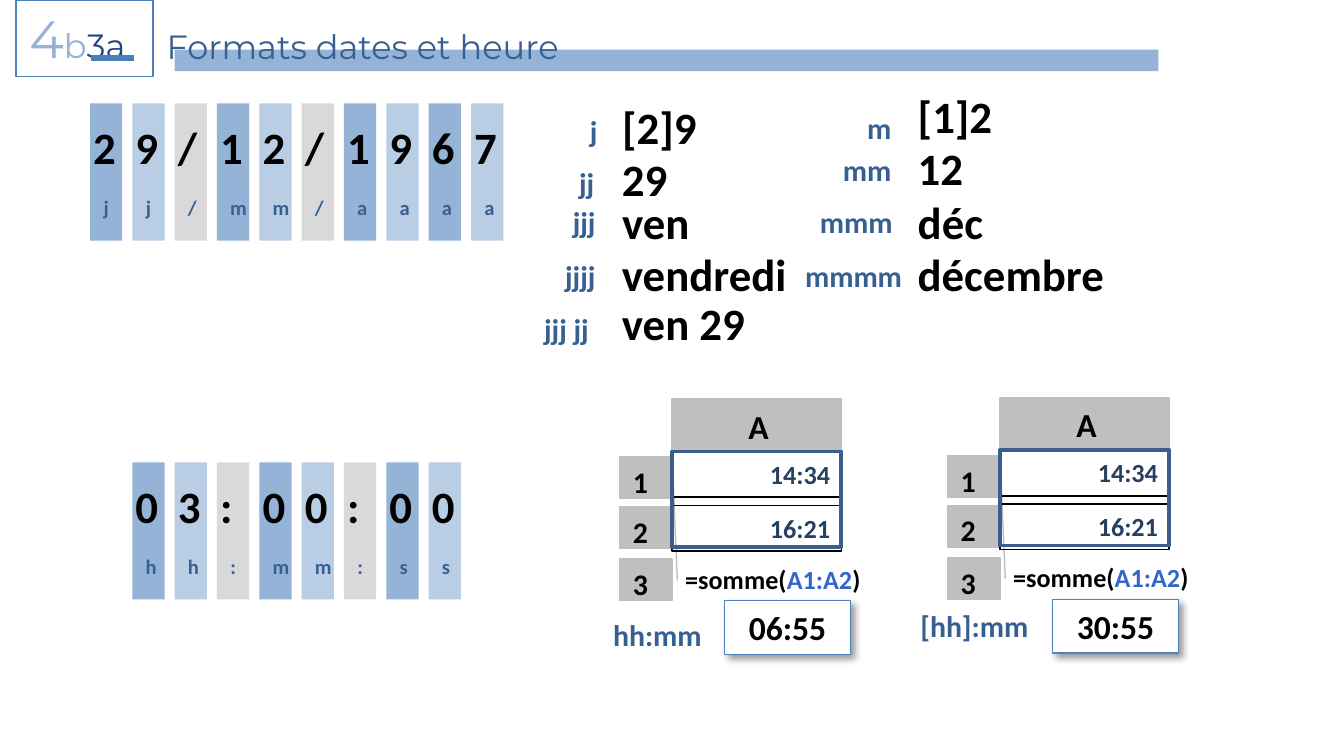
from itertools import cycle

from lxml.etree import SubElement
from pptx import Presentation
from pptx.dml.color import RGBColor
from pptx.enum.shapes import MSO_CONNECTOR as Connector, MSO_SHAPE as Shape
from pptx.enum.text import MSO_ANCHOR as Anchor, MSO_AUTO_SIZE as AutoSize, PP_ALIGN as Align
from pptx.oxml.ns import qn
from pptx.util import Inches, Pt

BLACK, WHITE, GREY, PALE_GREY = "000000", "FFFFFF", "BFBFBF", "D9D9D9"
STEEL, SKY, PALE_SKY = "376092", "95B3D7", "B9CDE5"
NAVY, BORDER = "254061", "4F81BD"
STRIP_LEFT = 0.67
COLUMN_WIDTH = 0.24
COLUMN_PITCH = 0.63 / 2

DAY_FORMATS = [
    ("j", (4.29, 0.79, 0.24), "[2]9", (4.53, 0.69, 0.79)),
    ("jj", (4.21, 1.18, 0.31), "29", (4.53, 1.08, 0.63)),
    ("jjj", (4.06, 1.47, 0.47), "ven", (4.53, 1.4, 0.79)),
    ("jjjj", (4.06, 1.87, 0.47), "vendredi", (4.53, 1.79, 1.97)),
    ("jjj jj ", (3.9, 2.26, 0.63), "ven 29", (4.53, 2.15, 1.97)),
]
MONTH_FORMATS = [
    ("m", (6.34, 0.77, 0.39), "[1]2", (6.73, 0.61, 0.79)),
    ("mm", (6.1, 1.08, 0.63), "12", (6.73, 1, 0.79)),
    ("mmm", (5.87, 1.47, 0.87), "déc", (6.73, 1.4, 0.79)),
    ("mmmm", (5.87, 1.87, 0.94), "décembre", (6.73, 1.79, 1.73)),
]


def rgb(value):
    """Return the colour for a hex string."""
    return RGBColor.from_string(value)


def write(shape, runs, size, align=Align.LEFT, font="Calibri", bold=True, wrap=True):
    """Write (text, colour) runs as the only paragraph of a shape."""
    frame = shape.text_frame
    frame.word_wrap = wrap
    frame.auto_size = AutoSize.SHAPE_TO_FIT_TEXT
    frame.vertical_anchor = Anchor.TOP
    paragraph = frame.paragraphs[0]
    paragraph.alignment = align
    paragraph.font.name = font
    paragraph.font.size = Pt(size)
    paragraph.font.bold = bold
    for text, color in runs:
        run = paragraph.add_run()
        run.text = text
        run.font.color.rgb = rgb(color)
    return paragraph


def add_text(slide, text, left, top, width, height, size, color=BLACK, align=Align.LEFT, wrap=True):
    """Add a bold text box in one colour."""
    box = slide.shapes.add_textbox(Inches(left), Inches(top), Inches(width), Inches(height))
    write(box, [(text, color)], size, align, wrap=wrap)


def add_box(slide, left, top, width, height, fill=None, line=None, weight=0.75):
    """Add a rectangle with an optional fill and outline."""
    box = slide.shapes.add_shape(
        Shape.RECTANGLE, Inches(left), Inches(top), Inches(width), Inches(height))
    box.shadow.inherit = False
    if fill:
        box.fill.solid()
        box.fill.fore_color.rgb = rgb(fill)
    else:
        box.fill.background()
    if line:
        box.line.color.rgb = rgb(line)
        box.line.width = Pt(weight)
    else:
        box.line.fill.background()
    return box


def add_line(slide, start, end, color, weight):
    """Add a straight line without shadow."""
    line = slide.shapes.add_connector(Connector.STRAIGHT, *map(Inches, start + end))
    line.line.color.rgb = rgb(color)
    line.line.width = Pt(weight)
    SubElement(line.element.spPr, qn("a:effectLst"))


def add_shadow(shape):
    """Give a shape a soft shadow to the lower right."""
    effects = shape.element.spPr.find(qn("a:effectLst"))
    shadow = SubElement(effects, qn("a:outerShdw"), blurRad=str(Pt(4)), dist=str(Pt(3)),
                        dir="2700000", algn="tl", rotWithShape="0")
    color = SubElement(shadow, qn("a:srgbClr"), val=BLACK)
    SubElement(color, qn("a:alpha"), val="40000")


def add_header(slide):
    """Add the section badge, the rule and the title."""
    badge = add_box(slide, 0.12, 0, 1.02, 0.57, WHITE, BORDER)
    paragraph = write(badge, [("4", SKY), ("b", SKY), ("3a", "1F497D")], 18,
                      font="Montserrat", bold=False)
    paragraph.runs[0].font.size = Pt(28)
    add_line(slide, (1, 0.43), (0.68, 0.43), "4B7EBC", 3)
    add_box(slide, 1.3, 0.37, 7.32, 0.16, SKY)
    title = slide.shapes.title
    title.left, title.top, title.width, title.height = map(Inches, (1.14, 0.14, 6.46, 0.4))
    write(title, [("Formats dates et heure", STEEL)], 18, font="Montserrat", bold=False)
    title.element.getparent().append(title.element)


def add_strip(slide, left, top, characters, codes):
    """Add a row of columns, each a character above its format code."""
    shades = cycle((SKY, PALE_SKY))
    gap = COLUMN_PITCH - COLUMN_WIDTH
    for index, (character, code) in enumerate(zip(characters, codes)):
        x = left + index * COLUMN_PITCH
        fill = PALE_GREY if character in "/:" else next(shades)
        add_box(slide, x, top, COLUMN_WIDTH, 1.02, fill)
        add_text(slide, code, x, top + 0.63, COLUMN_WIDTH, 0.29, 11, STEEL, Align.CENTER)
        add_text(slide, character, x - gap, top + 0.07, COLUMN_PITCH, 0.5, 24)


def add_formats(slide, formats):
    """Add format codes with the result of each beside it."""
    for code, code_place, result, result_place in formats:
        add_text(slide, code, *code_place, 0.37, 16, STEEL, Align.RIGHT)
        add_text(slide, result, *result_place, 0.5, 24)


def add_sheet(slide, left, top, code, code_place, total):
    """Add a small worksheet that sums two times."""
    add_text(slide, code, *code_place, 0.37, 16, STEEL, Align.RIGHT)
    formula = slide.shapes.add_textbox(
        Inches(left), Inches(top + 1.17), Inches(1.57), Inches(0.34))
    write(formula, [("=somme(", BLACK), ("A1:A2", "3366CC"), (")", BLACK)], 14)
    add_line(slide, (left, top + 0.4), (left + 0.04, top + 1.35), GREY, 0.75)
    for number, offset in (("1", 0.43), ("2", 0.8), ("3", 1.19)):
        add_box(slide, left - 0.39, top + offset, 0.39, 0.31, GREY, GREY)
        add_text(slide, number, left - 0.39, top + offset, 0.31, 0.37, 16)
    add_box(slide, left, top, 1.26, 0.39, GREY, GREY)
    add_text(slide, "A", left + 0.47, top, 0.31, 0.4, 18)
    for time, offset in (("14:34", 0.39), ("16:21", 0.79)):
        add_box(slide, left, top + offset, 1.26, 0.34, line=BLACK)
        add_text(slide, time, left + 0.63, top + offset, 0.66, 0.34, 14, NAVY, wrap=False)
    add_box(slide, left, top + 0.39, 1.26, 0.71, line="3A5F8C", weight=2)
    result = add_box(slide, left + 0.39, top + 1.5, 0.94, 0.4, WHITE, BORDER)
    add_shadow(result)
    write(result, [(total, BLACK)], 18, Align.CENTER)


def main():
    """Build the slide on date and time formats."""
    presentation = Presentation()
    presentation.slide_width = Inches(10)
    presentation.slide_height = presentation.slide_width * 9 // 16
    slide = presentation.slides.add_slide(presentation.slide_layouts[5])
    add_header(slide)
    add_strip(slide, STRIP_LEFT, 0.77, "29/12/1967", "jj/mm/aaaa")
    add_formats(slide, DAY_FORMATS)
    add_formats(slide, MONTH_FORMATS)
    add_strip(slide, STRIP_LEFT + COLUMN_PITCH, 3.44, "03:00:00", "hh:mm:ss")
    add_sheet(slide, 5, 2.97, "hh:mm", (4.45, 4.54, 0.87), "06:55")
    add_sheet(slide, 7.44, 2.96, "[hh]:mm", (6.73, 4.47, 1.02), "30:55")
    presentation.save("out.pptx")


if __name__ == "__main__":
    main()
